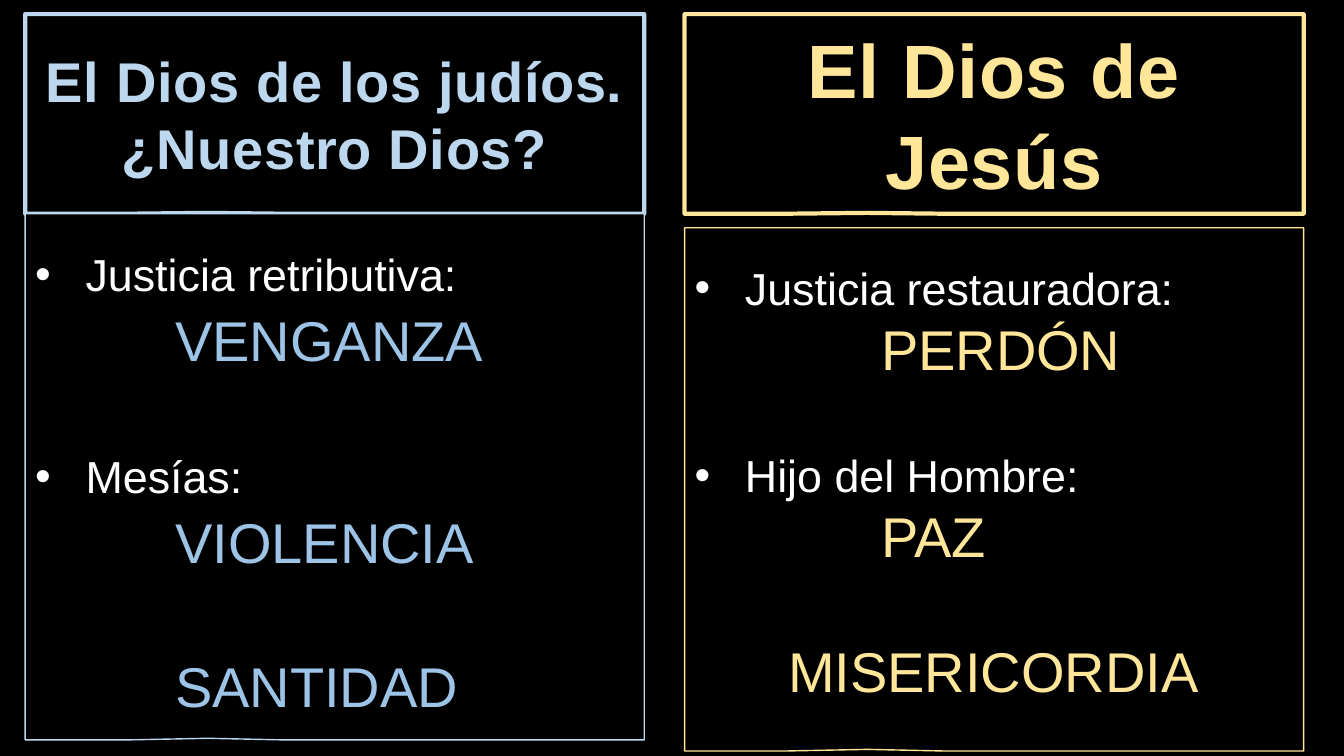
from pptx import Presentation
from pptx import util as u
from pptx.dml.color import RGBColor
from pptx.enum import shapes, text
from pptx.oxml.ns import qn
from lxml import etree

COLUMN_WIDTH = 6.14
HEADING_TOP, HEADING_HEIGHT = 0.14, 1.98


def rgb(value):
    """Return the colour of a hex string."""
    return RGBColor.from_string(value)


def add_callout(slide, box, color, weight, tip):
    """Add a black outlined callout in box and return its text frame."""
    sp = slide.shapes.add_shape(
        shapes.MSO_SHAPE.RECTANGULAR_CALLOUT, *[u.Inches(n) for n in box])
    sp.shadow.inherit = False
    sp.adjustments[0], sp.adjustments[1] = tip
    sp.fill.solid()
    sp.fill.fore_color.rgb = rgb("000000")
    sp.line.color.rgb = rgb(color)
    sp.line.width = u.Pt(weight)
    tf = sp.text_frame
    tf.word_wrap = True
    return tf


def add_text(tf, content, size, color, pitch, bold=False, spacing=0,
             align=text.PP_ALIGN.LEFT, before=0, indent=0, bullet=False):
    """Write one formatted paragraph into tf."""
    p = tf.paragraphs[0] if not tf.text else tf.add_paragraph()
    p.alignment = align
    p.line_spacing = u.Pt(pitch)
    p.space_before = u.Pt(before)
    pPr = p._p.get_or_add_pPr()
    pPr.set("marL", str(u.Inches(indent)))
    pPr.set("indent", str(u.Inches(-indent if bullet else 0)))
    if bullet:
        etree.SubElement(pPr, qn("a:buFont")).set("typeface", "Arial")
        etree.SubElement(pPr, qn("a:buChar")).set("char", "•")
    r = p.add_run()
    r.text = content
    r.font.name = "Arial"
    r.font.size = u.Pt(size)
    r.font.bold = bold
    r.font.color.rgb = rgb(color)
    if spacing:
        r.font._element.set("spc", str(int(spacing * 100)))


def add_heading(slide, box, lines, size, pitch, color):
    """Place a column heading, centred in box."""
    tf = add_callout(slide, box, color, 3, (-0.206, 0.496))
    tf.vertical_anchor = text.MSO_ANCHOR.MIDDLE
    for line in lines:
        add_text(tf, line, size, color, pitch, bold=True, spacing=0.5,
                 align=text.PP_ALIGN.CENTER)


def add_body(slide, box, line_color, word_color, inset, items):
    """Place the bulleted topics and their key words in box."""
    tf = add_callout(slide, box, line_color, 1, (-0.205, 0.497))
    tf.vertical_anchor = text.MSO_ANCHOR.TOP
    tf.margin_top = u.Inches(inset)
    for content, before, indent in items:
        if content.endswith(":"):
            add_text(tf, content, 32, "FFFFFF", 40, before=before,
                     indent=indent, bullet=True)
        else:
            add_text(tf, content, 40, word_color, 48, before=before,
                     indent=indent)


def build_slide(prs):
    """Compare the two images of God in two columns."""
    slide = prs.slides.add_slide(prs.slide_layouts[6])
    slide.background.fill.solid()
    slide.background.fill.fore_color.rgb = rgb("000000")
    left, right = 0.25, 6.79
    blue, yellow = "BDD7EE", "FFE699"
    add_heading(slide, (left, HEADING_TOP, COLUMN_WIDTH, HEADING_HEIGHT),
                ["El Dios de los judíos.", "¿Nuestro Dios?"], 40, 48, blue)
    add_heading(slide, (right, HEADING_TOP, COLUMN_WIDTH, HEADING_HEIGHT),
                ["El Dios de Jesús"], 54, 65, yellow)
    add_body(slide, (left, 2.12, COLUMN_WIDTH, 5.22), blue, "9DC3E6", 0.31, [
        ("Justicia retributiva:", 0, 0.5),
        ("VENGANZA", 3.5, 1.39),
        ("Mesías:", 52.5, 0.5),
        ("VIOLENCIA", 3.5, 1.39),
        ("SANTIDAD", 55, 1.39),
    ])
    add_body(slide, (right, 2.26, COLUMN_WIDTH, 5.19), yellow, yellow, 0.3, [
        ("Justicia restauradora:", 0, 0.5),
        ("PERDÓN", 0, 1.85),
        ("Hijo del Hombre:", 46, 0.5),
        ("PAZ", 0, 1.85),
        ("MISERICORDIA", 48.5, 0.93),
    ])


def main():
    """Create the presentation and save it."""
    prs = Presentation()
    prs.slide_width, prs.slide_height = u.Inches(13.33), u.Inches(7.5)
    build_slide(prs)
    prs.save("out.pptx")


if __name__ == "__main__":
    main()
